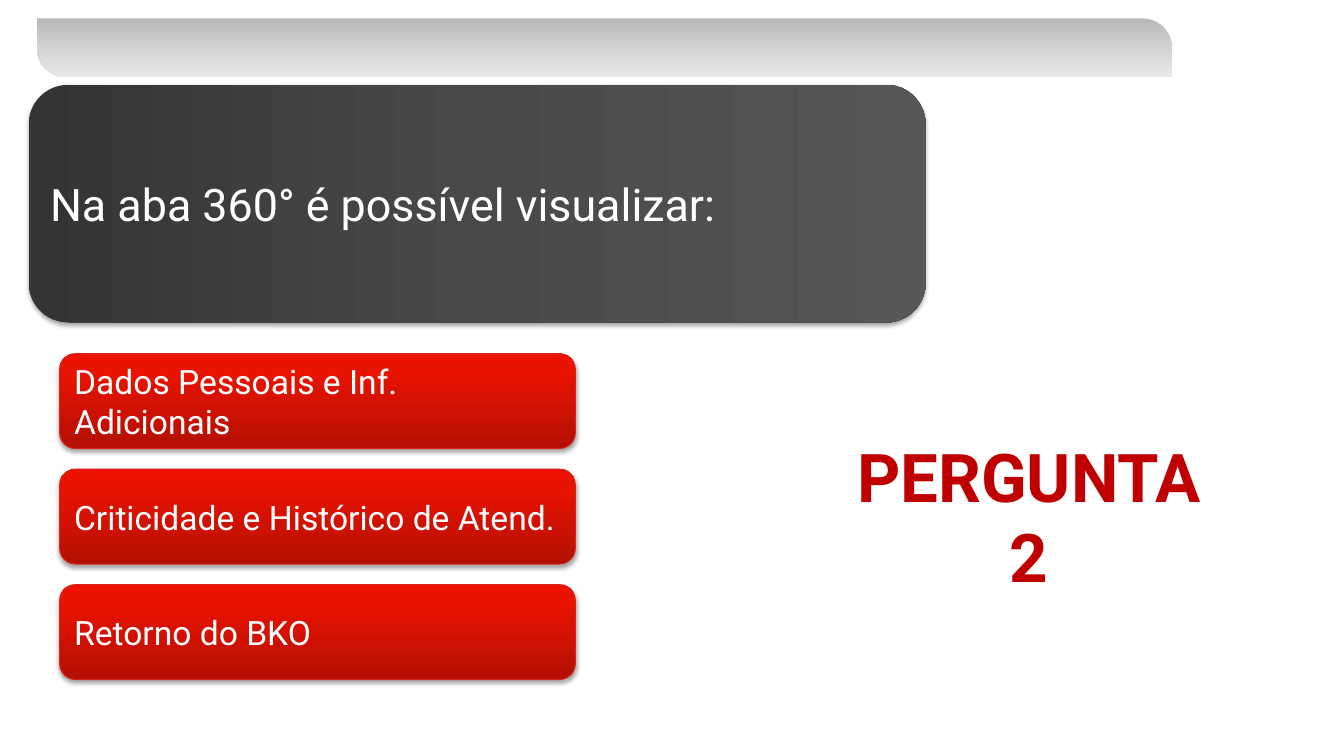
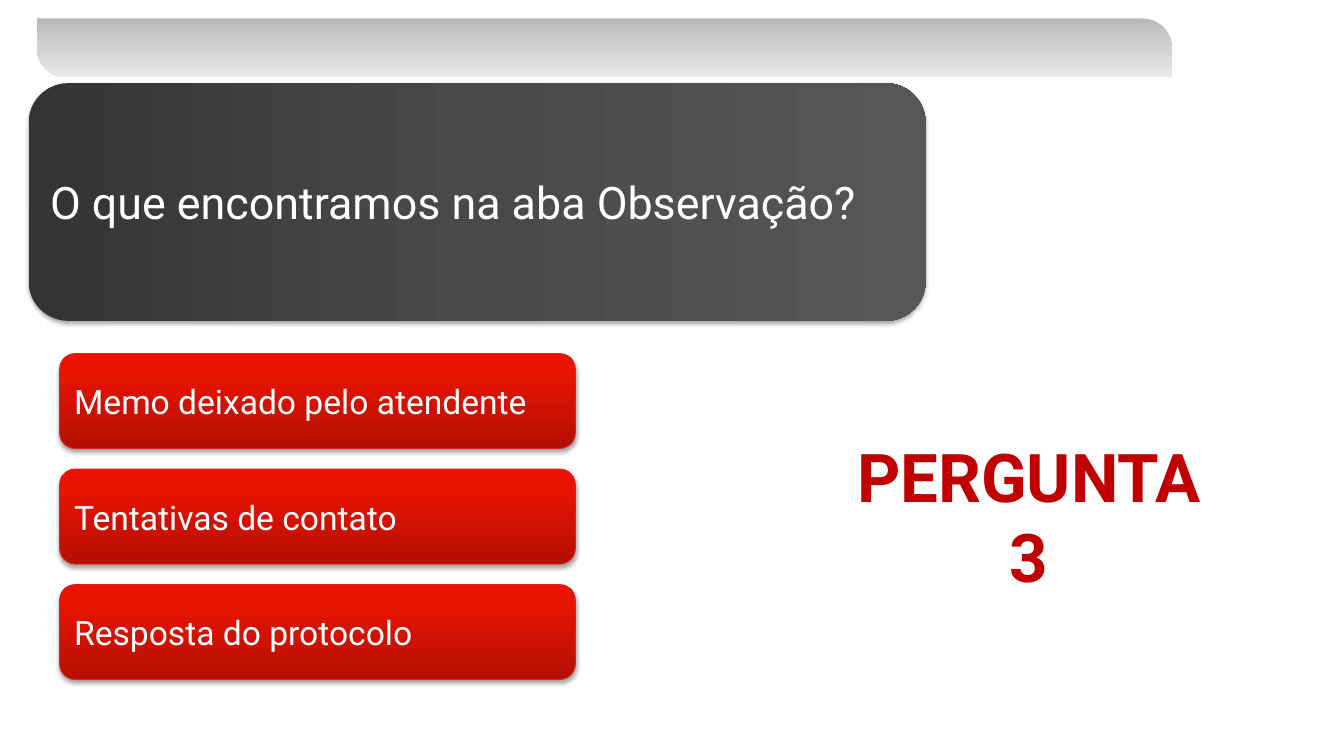
from pptx import Presentation
from pptx.dml.color import RGBColor
from pptx.enum.shapes import MSO_SHAPE
from pptx.enum.text import MSO_ANCHOR, MSO_AUTO_SIZE, PP_ALIGN
from pptx.oxml import parse_xml
from pptx.oxml.ns import nsdecls, qn
from pptx.util import Emu, Inches, Pt

ROUNDED = MSO_SHAPE.ROUNDED_RECTANGLE
DIAGONAL = MSO_SHAPE.ROUND_2_DIAG_RECTANGLE
MIDDLE = MSO_ANCHOR.MIDDLE
GROW = MSO_AUTO_SIZE.SHAPE_TO_FIT_TEXT
LEFT, CENTER = PP_ALIGN.LEFT, PP_ALIGN.CENTER

COLUMNS, ROWS = 160, 90
CELL = Inches(7.5) / ROWS
FONT = "Roboto"
COLORS = {
    "white": "FFFFFF",
    "label": "C00000",
    "answer_line": "D52619",
    "shadow": "000000",
}
GRADIENTS = {
    "band": (90, [(0, "B8B8B8"), (50, "D3D3D3"), (100, "E9E9E9")]),
    "question": (0, [(0, "333434"), (50, "484A4A"), (100, "565858")]),
    "answer": (270, [(0, "B30F02"), (80, "E91302"), (100, "ED1100")]),
}

ANSWER_TOP, ANSWER_PITCH = 42.1, 13.75

QUESTIONS = [
    (2, 10.1, "Na aba 360° é possível visualizar:", [
        "Dados Pessoais e Inf. Adicionais",
        "Criticidade e Histórico de Atend.",
        "Retorno do BKO",
    ]),
    (3, 9.9, "O que encontramos na aba Observação?", [
        "Memo deixado pelo atendente",
        "Tentativas de contato",
        "Resposta do protocolo",
    ]),
]


def grid(*cells):
    return [Emu(round(cell * CELL)) for cell in cells]


def color(name):
    return RGBColor.from_string(COLORS[name])


def set_gradient(shape, name):
    angle, stops = GRADIENTS[name]
    stop_xml = "".join(
        f'<a:gs pos="{position * 1000}"><a:srgbClr val="{value}"/></a:gs>'
        for position, value in stops
    )
    gradient = parse_xml(
        f'<a:gradFill {nsdecls("a")} rotWithShape="1"><a:gsLst>{stop_xml}</a:gsLst>'
        f'<a:lin ang="{angle * 60000}" scaled="0"/></a:gradFill>'
    )
    shape.fill.gradient()
    properties = shape.element.spPr
    properties.replace(properties.find(qn("a:gradFill")), gradient)


def add_shadow(shape):
    effects = shape.element.spPr.find(qn("a:effectLst"))
    effects.append(parse_xml(
        f'<a:outerShdw {nsdecls("a")} blurRad="{Pt(3.1)}" dist="{Pt(1.8)}" '
        f'dir="5400000" rotWithShape="0"><a:srgbClr val="{COLORS["shadow"]}">'
        '<a:alpha val="35000"/></a:srgbClr></a:outerShdw>'
    ))


def write(text_frame, lines, size, color_name, alignment, bold=False):
    text_frame.text = "\n".join(lines)
    for paragraph in text_frame.paragraphs:
        paragraph.alignment = alignment
        paragraph.font.name = FONT
        paragraph.font.size = Pt(size)
        paragraph.font.bold = bold
        paragraph.font.color.rgb = color(color_name)


def add_panel(slide, preset, cells, gradient):
    shape = slide.shapes.add_shape(preset, *grid(*cells))
    shape.shadow.inherit = False
    shape.line.fill.background()
    set_gradient(shape, gradient)
    return shape


def add_band(slide):
    band = add_panel(slide, DIAGONAL, (4.4, 2.2, 135.1, 7), "band")
    band.adjustments[0] = 0
    band.adjustments[1] = 0.5


def add_card(slide, cells, gradient, text, size):
    card = add_panel(slide, ROUNDED, cells, gradient)
    add_shadow(card)
    card.text_frame.word_wrap = True
    card.text_frame.vertical_anchor = MIDDLE
    write(card.text_frame, [text], size, "white", LEFT)
    return card


def add_answers(slide, answers):
    for index, answer in enumerate(answers):
        top = ANSWER_TOP + index * ANSWER_PITCH
        card = add_card(slide, (7.1, top, 61.4, 11.3), "answer", answer, 24)
        card.line.color.rgb = color("answer_line")
        card.line.width = Pt(0.75)


def add_label(slide, number):
    label = slide.shapes.add_textbox(*grid(100.2, 51.2, 44.6, 20.6))
    label.text_frame.word_wrap = False
    label.text_frame.auto_size = GROW
    write(label.text_frame, ["PERGUNTA", str(number)], 48, "label", CENTER, bold=True)


def main():
    presentation = Presentation()
    presentation.slide_width, presentation.slide_height = grid(COLUMNS, ROWS)
    blank = presentation.slide_layouts[6]
    for number, top, question, answers in QUESTIONS:
        slide = presentation.slides.add_slide(blank)
        add_band(slide)
        add_card(slide, (3.4, top, 106.8, 28.3), "question", question, 32)
        add_answers(slide, answers)
        add_label(slide, number)
    presentation.save("out.pptx")


if __name__ == "__main__":
    main()
